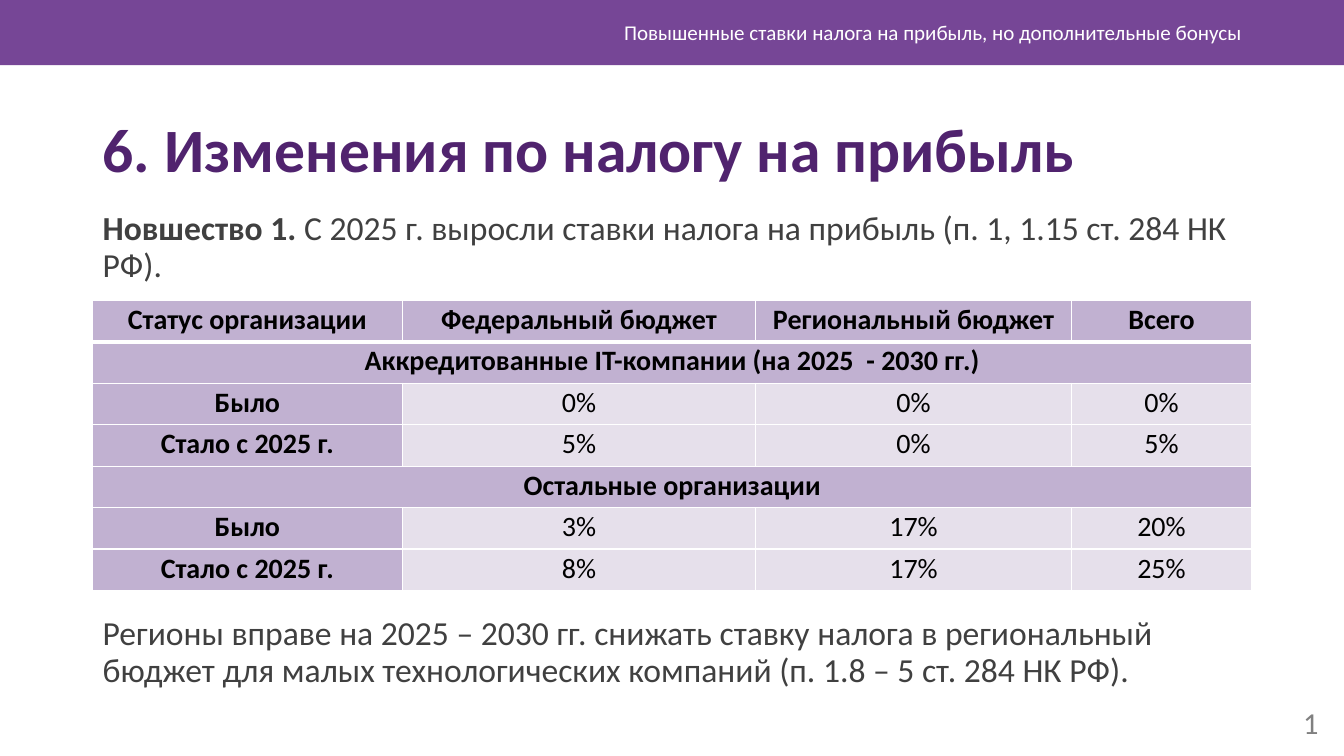
from dataclasses import dataclass

from lxml import etree
from pptx import Presentation
from pptx.dml.color import RGBColor
from pptx.enum.shapes import MSO_SHAPE
from pptx.enum.text import MSO_ANCHOR, MSO_AUTO_SIZE, PP_ALIGN
from pptx.oxml.ns import qn
from pptx.util import Pt

TOP, MIDDLE = MSO_ANCHOR.TOP, MSO_ANCHOR.MIDDLE
LEFT, CENTER, RIGHT = PP_ALIGN.LEFT, PP_ALIGN.CENTER, PP_ALIGN.RIGHT
RECTANGLE = MSO_SHAPE.RECTANGLE
NO_AUTOFIT = MSO_AUTO_SIZE.NONE

FONT = "Calibri"
COLORS = {
    "band": "764696",
    "title": "50236E",
    "body": "404040",
    "number": "808080",
    "white": "FFFFFF",
    "black": "000000",
    "head_cell": "C1B1D1",
    "value_cell": "E6E0EB",
}
SLIDE_W, SLIDE_H = 960, 540
MARGIN, CONTENT_W = 66.24, 828
TABLE_TOP, ROW_H = 214.6, 29.62
COL_WIDTHS = (221, 252.7, 225.3, 129)
TABLE_ROWS = (
    ("Статус организации", "Федеральный бюджет", "Региональный бюджет", "Всего"),
    ("Аккредитованные IT-компании (на 2025  - 2030 гг.)",),
    ("Было", "0%", "0%", "0%"),
    ("Стало с 2025 г.", "5%", "0%", "5%"),
    ("Остальные организации",),
    ("Было", "3%", "17%", "20%"),
    ("Стало с 2025 г.", "8%", "17%", "25%"),
)


@dataclass
class Label:
    left: float
    top: float
    width: float
    height: float
    text: str
    size: float
    color: str
    align: PP_ALIGN = LEFT
    anchor: MSO_ANCHOR = TOP
    spacing: float = 1.0
    bold: bool = False
    bold_lead: str = ""


TITLE = Label(MARGIN, 81.4, CONTENT_W, 56, "6. Изменения по налогу на прибыль",
              44, "title", spacing=0.9, bold=True)
LABELS = (
    Label(900.7, 501.8, 48.2, 28.8, "1", 21.7, "number", RIGHT, MIDDLE),
    Label(254.9, 8.6, 639.4, 28.8,
          "Повышенные ставки налога на прибыль, но дополнительные бонусы",
          15, "white", RIGHT, MIDDLE),
    Label(MARGIN, 147.7, CONTENT_W, 60,
          "С 2025 г. выросли ставки налога на прибыль (п. 1, 1.15 ст. 284 НК РФ).",
          24, "body", spacing=0.9, bold_lead="Новшество 1. "),
    Label(MARGIN, 437, CONTENT_W, 60,
          "Регионы вправе на 2025 – 2030 гг. снижать ставку налога в региональный "
          "бюджет для малых технологических компаний (п. 1.8 – 5 ст. 284 НК РФ).",
          24, "body", spacing=0.9),
)


def rgb(name: str) -> RGBColor:
    return RGBColor.from_string(COLORS[name])


def format_run(r, size: float, color: str, bold: bool) -> None:
    r.font.name = FONT
    r.font.size = Pt(size)
    r.font.bold = bold
    r.font.color.rgb = rgb(color)


def fill_label(sp, label: Label) -> None:
    sp.left, sp.top = Pt(label.left), Pt(label.top)
    sp.width, sp.height = Pt(label.width), Pt(label.height)
    tf = sp.text_frame
    tf.word_wrap = True
    tf.auto_size = NO_AUTOFIT
    tf.vertical_anchor = label.anchor
    p = tf.paragraphs[0]
    p.alignment = label.align
    p.line_spacing = label.spacing
    for text, bold in ((label.bold_lead, True), (label.text, label.bold)):
        if text:
            r = p.add_run()
            r.text = text
            format_run(r, label.size, label.color, bold)


def add_label(s, label: Label) -> None:
    fill_label(s.shapes.add_textbox(0, 0, 0, 0), label)


def add_band(s) -> None:
    sp = s.shapes.add_shape(RECTANGLE, 0, 0, Pt(SLIDE_W), Pt(46.6))
    sp.shadow.inherit = False
    sp.fill.solid()
    sp.fill.fore_color.rgb = rgb("band")
    sp.line.fill.background()


def set_borders(cell, top: float, bottom: float) -> None:
    tc_pr = cell._tc.get_or_add_tcPr()
    edges = (("a:lnL", 1), ("a:lnR", 1), ("a:lnT", top), ("a:lnB", bottom))
    for index, (tag, width) in enumerate(edges):
        ln = etree.Element(qn(tag), w=str(Pt(width)))
        fill = etree.SubElement(ln, qn("a:solidFill"))
        etree.SubElement(fill, qn("a:srgbClr"), val=COLORS["white"])
        tc_pr.insert(index, ln)


def format_cell(cell, text: str, is_head: bool) -> None:
    cell.margin_left = cell.margin_right = Pt(5)
    cell.margin_top = cell.margin_bottom = 0
    cell.fill.solid()
    cell.fill.fore_color.rgb = rgb("head_cell" if is_head else "value_cell")
    if text:
        p = cell.text_frame.paragraphs[0]
        p.text = text
        p.alignment = CENTER
        p.line_spacing = 1.07
        format_run(p.runs[0], 20, "black", is_head)


def add_rates_table(s) -> None:
    n_rows, n_cols = len(TABLE_ROWS), len(COL_WIDTHS)
    table = s.shapes.add_table(n_rows, n_cols, Pt(MARGIN), Pt(TABLE_TOP),
                               Pt(CONTENT_W), Pt(ROW_H * n_rows)).table
    for col, width in zip(table.columns, COL_WIDTHS):
        col.width = Pt(width)
    for i, texts in enumerate(TABLE_ROWS):
        table.rows[i].height = Pt(ROW_H)
        is_group = len(texts) == 1
        if is_group:
            table.cell(i, 0).merge(table.cell(i, n_cols - 1))
        for j in range(n_cols):
            cell = table.cell(i, j)
            text = texts[j] if j < len(texts) else ""
            format_cell(cell, text, i == 0 or j == 0 or is_group)
            set_borders(cell, 3 if i == 1 else 1, 3 if i == 0 else 1)


def main() -> None:
    prs = Presentation()
    prs.slide_width, prs.slide_height = Pt(SLIDE_W), Pt(SLIDE_H)
    s = prs.slides.add_slide(prs.slide_layouts[5])
    add_band(s)
    fill_label(s.shapes.title, TITLE)
    for label in LABELS:
        add_label(s, label)
    add_rates_table(s)
    prs.save("out.pptx")


if __name__ == "__main__":
    main()
